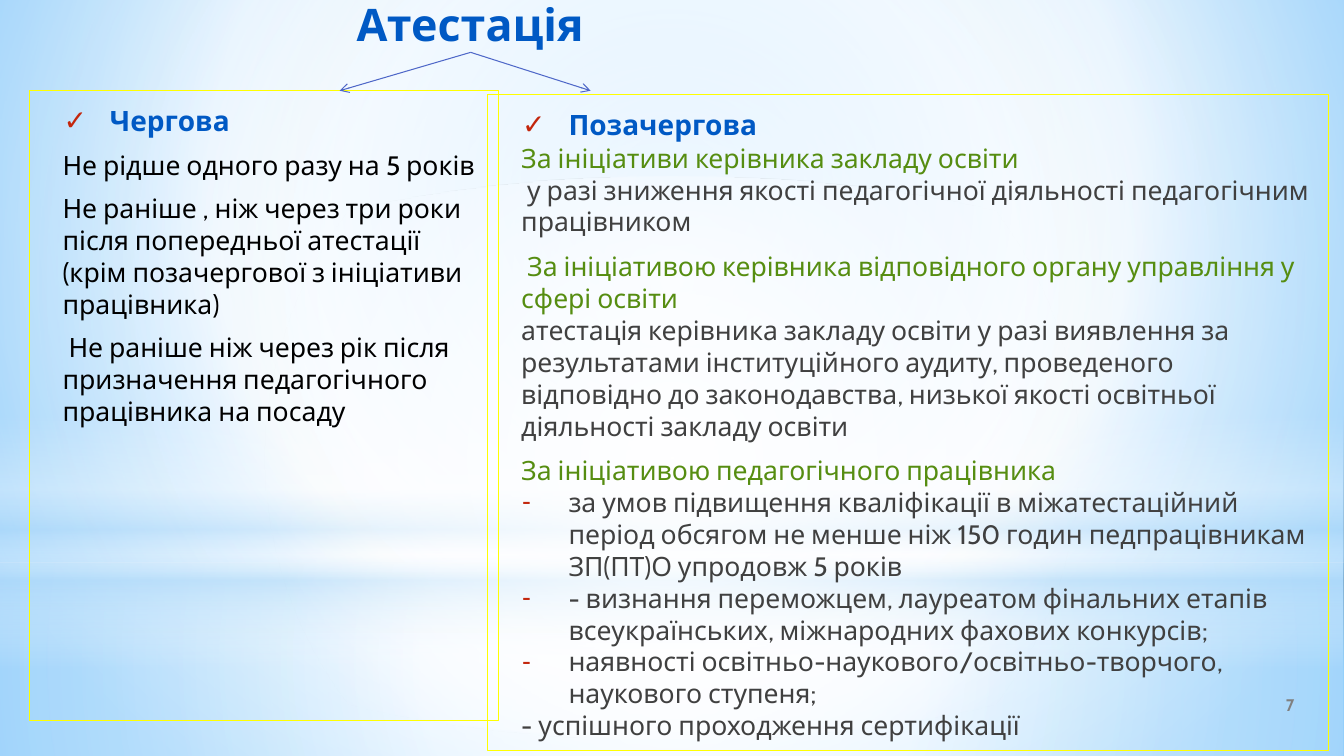
from lxml import etree
from pptx import Presentation
from pptx.dml.color import RGBColor
from pptx.enum.shapes import MSO_CONNECTOR as CONNECTOR, MSO_SHAPE as SHAPE
from pptx.enum.text import MSO_ANCHOR as ANCHOR, MSO_AUTO_SIZE as AUTO_SIZE, PP_ALIGN as ALIGN
from pptx.oxml.ns import qn
from pptx.util import Pt

FONT = "Cabin"
BLUE = RGBColor(0x00, 0x59, 0xC4)
GREEN = RGBColor(0x56, 0x8D, 0x11)
DARK = RGBColor(0x40, 0x40, 0x40)
BLACK = RGBColor(0x00, 0x00, 0x00)
GRAY = RGBColor(0x80, 0x80, 0x80)
RED = RGBColor(0xC3, 0x26, 0x0C)
YELLOW = RGBColor(0xFF, 0xFF, 0x00)
ARROW = RGBColor(0x4E, 0x67, 0xC8)
WHITE = RGBColor(0xFF, 0xFF, 0xFF)
PALE = RGBColor(0xB4, 0xDC, 0xFA)
SKY = RGBColor(0x9E, 0xD5, 0xFF)
DEEP = RGBColor(0x5B, 0xB9, 0xFF)

# Content
TITLE = "Атестація"
PAGE = "7"
# Paragraph: text, size, colour, bold, bullet, space before
REGULAR = [
    ("Чергова", 20, BLUE, True, "✓", 8),
    ("Не рідше одного разу на 5 років", 19, BLACK, False, None, 8),
    ("Не раніше , ніж через три роки після попередньої атестації "
     "(крім позачергової з ініціативи працівника)", 19, BLACK, False, None, 8),
    (" Не раніше ніж через рік після призначення педагогічного працівника на посаду",
     19, BLACK, False, None, 8),
]
EXTRAORDINARY = [
    ("Позачергова", 20, BLUE, True, "✓", 8),
    ("За ініціативи керівника закладу освіти", 19, GREEN, False, None, 0),
    (" у разі зниження якості педагогічної діяльності педагогічним працівником",
     19, DARK, False, None, 0),
    (" За ініціативою керівника відповідного органу управління у сфері освіти",
     19, GREEN, False, None, 9),
    ("атестація керівника закладу освіти у разі виявлення за результатами "
     "інституційного аудиту, проведеного відповідно до законодавства, низької якості "
     "освітньої діяльності закладу освіти", 19, DARK, False, None, 0),
    ("За ініціативою педагогічного працівника", 19, GREEN, False, None, 9),
    ("за умов підвищення кваліфікації в міжатестаційний період обсягом не менше ніж "
     "150 годин педпрацівникам ЗП(ПТ)О упродовж 5 років", 19, DARK, False, "-", 0),
    ("- визнання переможцем, лауреатом фінальних етапів всеукраїнських, міжнародних "
     "фахових конкурсів;", 19, DARK, False, "-", 0),
    ("наявності освітньо-наукового/освітньо-творчого, наукового ступеня;",
     19, DARK, False, "-", 0),
    ("- успішного проходження сертифікації", 19, DARK, False, None, 0),
]

# Places in points: left, top, width, height
WIDTH, HEIGHT, HORIZON = 960, 540, 401.8
TITLE_BOX = (61.9, 9.4, 547.9, 36)
PANELS = [((20.9, 64.8, 335.5, 450), REGULAR),
          ((348.5, 67.7, 600.5, 468.7), EXTRAORDINARY)]
PAGE_BOX = (898.6, 480.2, 46.1, 46.1)
ARROW_START, ARROW_ENDS = (336.2, 37.4), [(242.6, 64.8), (421.9, 64.8)]
MARGIN = 9.4

# Gradients: stops (position, colour, opacity) and focus rectangle, None for vertical
CENTRE = (50, 50, 50, 50)
BACKDROP = ([(0, SKY, 100), (60, WHITE, 100), (100, DEEP, 100)], (20, 10, 20, 60))
GLOWS = [
    (SHAPE.RECTANGLE, (0, HORIZON, WIDTH, HEIGHT - HORIZON),
     [(0, WHITE, 91), (37, WHITE, 76), (100, PALE, 79)], CENTRE),
    (SHAPE.RECTANGLE, (0, 0, WIDTH, HORIZON),
     [(0, WHITE, 89), (48, WHITE, 62), (100, PALE, 79)], CENTRE),
    (SHAPE.RECTANGLE, (0, 296.6, WIDTH, 180),
     [(0, WHITE, 0), (29, WHITE, 30), (45, PALE, 40), (55, WHITE, 26),
      (65, PALE, 60), (100, WHITE, 0)], None),
    (SHAPE.OVAL, (0, 126, WIDTH, HORIZON), [(0, WHITE, 100), (56, WHITE, 0)], CENTRE),
]


def add_node(parent, tag, **attributes):
    node = etree.SubElement(parent, qn(tag))
    for name, value in attributes.items():
        node.set(name, str(value))
    return node


def set_gradient(fill, properties, stops, focus):
    fill.gradient()
    gradient = properties.find(qn("a:gradFill"))
    for child in list(gradient):
        gradient.remove(child)
    stop_list = add_node(gradient, "a:gsLst")
    for position, colour, opacity in stops:
        stop = add_node(stop_list, "a:gs", pos=position * 1000)
        add_node(add_node(stop, "a:srgbClr", val=colour), "a:alpha", val=opacity * 1000)
    if focus is None:
        add_node(gradient, "a:lin", ang=5400000, scaled=0)
    else:
        sides = {side: value * 1000 for side, value in zip("ltrb", focus)}
        add_node(add_node(gradient, "a:path", path="circle"), "a:fillToRect", **sides)


def place(shape, box):
    shape.left, shape.top, shape.width, shape.height = map(Pt, box)


def prepare_frame(shape, anchor):
    frame = shape.text_frame
    frame.word_wrap = True
    frame.auto_size = AUTO_SIZE.NONE
    frame.vertical_anchor = anchor
    frame.margin_left = frame.margin_right = Pt(MARGIN)
    frame.margin_top = frame.margin_bottom = Pt(MARGIN)
    return frame


def add_text(paragraph, text, size, colour, bold, alignment):
    paragraph.alignment = alignment
    run = paragraph.add_run()
    run.text = text
    run.font.name, run.font.size, run.font.bold = FONT, Pt(size), bold
    run.font.color.rgb = colour


def format_list_item(paragraph, bullet, space_before):
    paragraph.line_spacing = 1.0
    paragraph.space_before, paragraph.space_after = Pt(space_before), Pt(0)
    properties = paragraph._p.get_or_add_pPr()
    left, indent = (48.2, -33.1) if bullet else (14.4, 0)
    properties.set("marL", str(int(Pt(left))))
    properties.set("indent", str(int(Pt(indent))))
    if bullet:
        add_node(add_node(properties, "a:buClr"), "a:srgbClr", val=RED)
        add_node(properties, "a:buChar", char=bullet)
    else:
        add_node(properties, "a:buNone")


def main():
    presentation = Presentation()
    presentation.slide_width, presentation.slide_height = Pt(WIDTH), Pt(HEIGHT)
    slide = presentation.slides.add_slide(presentation.slide_layouts[3])
    shapes = slide.shapes
    title, *bodies = slide.placeholders

    # Background and soft glows behind the text
    fill = slide.background.fill
    fill.gradient()
    set_gradient(fill, slide.element.cSld.find(qn("p:bg")).find(qn("p:bgPr")), *BACKDROP)
    for kind, box, stops, focus in GLOWS:
        glow = shapes.add_shape(kind, *map(Pt, box))
        glow.shadow.inherit = False
        glow.line.fill.background()
        set_gradient(glow.fill, glow.element.spPr, stops, focus)
        title.element.addprevious(glow.element)

    # Title
    place(title, TITLE_BOX)
    frame = prepare_frame(title, ANCHOR.BOTTOM)
    add_text(frame.paragraphs[0], TITLE, 32, BLUE, True, ALIGN.CENTER)

    # Two panels
    for body, (box, items) in zip(bodies, PANELS):
        place(body, box)
        body.line.color.rgb, body.line.width = YELLOW, Pt(0.75)
        frame = prepare_frame(body, ANCHOR.TOP)
        for index, (text, size, colour, bold, bullet, space_before) in enumerate(items):
            paragraph = frame.add_paragraph() if index else frame.paragraphs[0]
            add_text(paragraph, text, size, colour, bold, ALIGN.LEFT)
            format_list_item(paragraph, bullet, space_before)

    # Page number
    number = shapes.add_textbox(*map(Pt, PAGE_BOX))
    frame = prepare_frame(number, ANCHOR.MIDDLE)
    add_text(frame.paragraphs[0], PAGE, 12, GRAY, True, ALIGN.CENTER)

    # Arrows from the title to the panels
    for end in ARROW_ENDS:
        arrow = shapes.add_connector(CONNECTOR.STRAIGHT, *map(Pt, ARROW_START + end))
        arrow.line.color.rgb, arrow.line.width = ARROW, Pt(0.75)
        add_node(arrow.line._get_or_add_ln(), "a:tailEnd", type="arrow")
        add_node(arrow.element.spPr, "a:effectLst")

    presentation.save("out.pptx")


if __name__ == "__main__":
    main()
